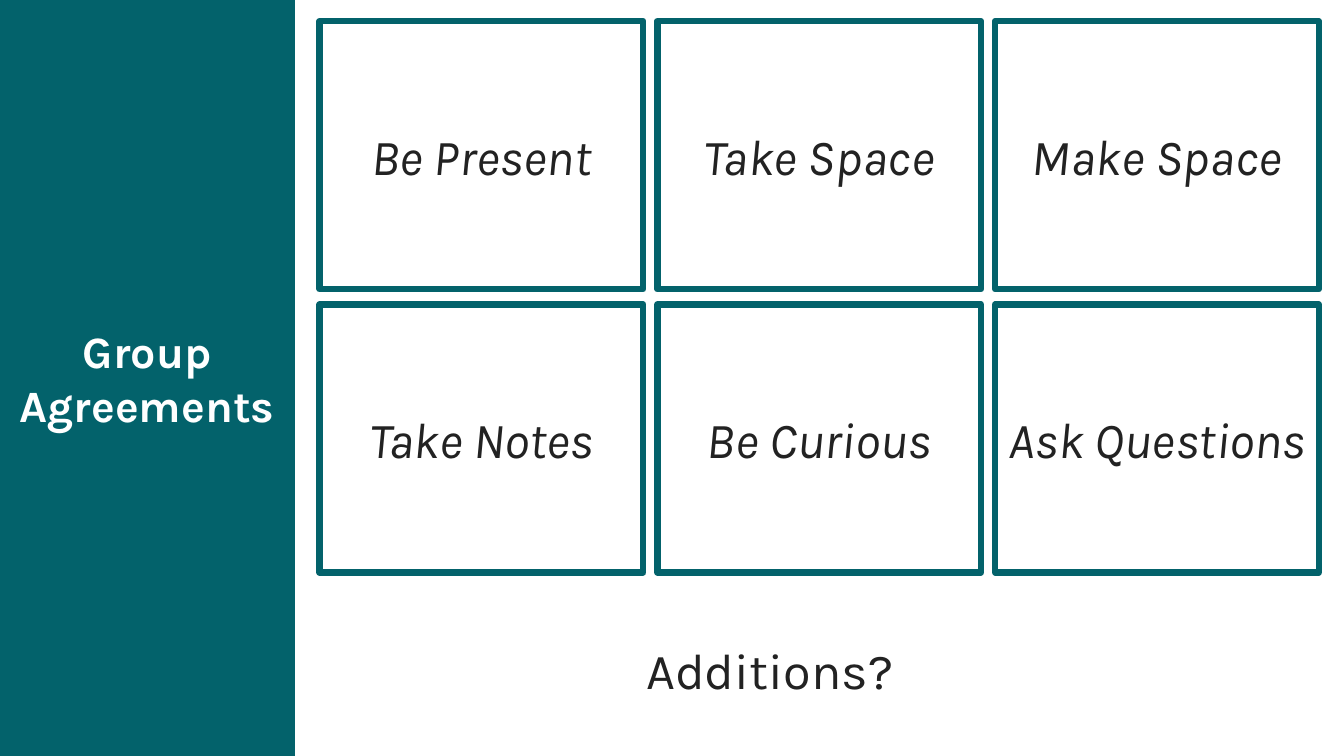
from dataclasses import dataclass

from pptx import Presentation
from pptx.dml.color import RGBColor
from pptx.enum.shapes import MSO_SHAPE as Preset
from pptx.enum.text import MSO_ANCHOR as Anchor, PP_ALIGN as Align
from pptx.shapes.autoshape import Shape
from pptx.slide import Slide
from pptx.util import Emu, Pt

EMU_PER_PX = 9144  # 100 px to the inch
FONT = "Karla"
COLOURS = {"teal": "03626B", "white": "FFFFFF", "ink": "222222"}

AGREEMENTS = [
    ["Be Present", "Take Space", "Make Space"],
    ["Take Notes", "Be Curious", "Ask Questions"],
]
CARD_LEFT, CARD_TOP = 317, 21
CARD_WIDTH, CARD_HEIGHT = 321, 266
COLUMN_STEP, ROW_STEP = 335, 281


@dataclass(frozen=True)
class Panel:
    text: str
    left: int
    top: int
    width: int
    height: int
    fill: str = "white"
    line: str | None = "teal"
    line_width: float = 4.5
    size: int = 36
    colour: str = "ink"
    bold: bool = False
    italic: bool = False


def px(length: int) -> Emu:
    return Emu(length * EMU_PER_PX)


def rgb(name: str) -> RGBColor:
    return RGBColor.from_string(COLOURS[name])


def write_text(shape: Shape, text: str, *, size: int, colour: str,
               bold: bool = False, italic: bool = False) -> None:
    frame = shape.text_frame
    frame.word_wrap = True
    frame.vertical_anchor = Anchor.MIDDLE
    frame.margin_left = frame.margin_right = px(5)
    paragraph = frame.paragraphs[0]
    paragraph.alignment = Align.CENTER
    run = paragraph.add_run()
    run.text = text
    run.font.name = FONT
    run.font.size = Pt(size)
    run.font.bold = bold
    run.font.italic = italic
    run.font.color.rgb = rgb(colour)


def draw_panel(slide: Slide, panel: Panel) -> None:
    shape = slide.shapes.add_shape(
        Preset.RECTANGLE, px(panel.left), px(panel.top), px(panel.width), px(panel.height))
    shape.shadow.inherit = False
    shape.fill.solid()
    shape.fill.fore_color.rgb = rgb(panel.fill)
    if panel.line:
        shape.line.color.rgb = rgb(panel.line)
        shape.line.width = Pt(panel.line_width)
    else:
        shape.line.fill.background()
    write_text(shape, panel.text, size=panel.size, colour=panel.colour,
               bold=panel.bold, italic=panel.italic)


def agreement_cards() -> list[Panel]:
    return [
        Panel(text, CARD_LEFT + column * COLUMN_STEP, CARD_TOP + row * ROW_STEP,
              CARD_WIDTH, CARD_HEIGHT, italic=True)
        for row, texts in enumerate(AGREEMENTS)
        for column, text in enumerate(texts)
    ]


def main() -> None:
    presentation = Presentation()
    presentation.slide_width = px(1333)
    presentation.slide_height = px(750)
    slide = presentation.slides.add_slide(presentation.slide_layouts[6])

    sidebar = Panel("Group Agreements", 0, 0, 292, 750, fill="teal", line_width=1,
                    size=32, colour="white", bold=True)
    additions = Panel("Additions?", 306, 605, 915, 118, line=None)
    for panel in [sidebar, *agreement_cards(), additions]:
        draw_panel(slide, panel)

    presentation.save("out.pptx")


if __name__ == "__main__":
    main()
